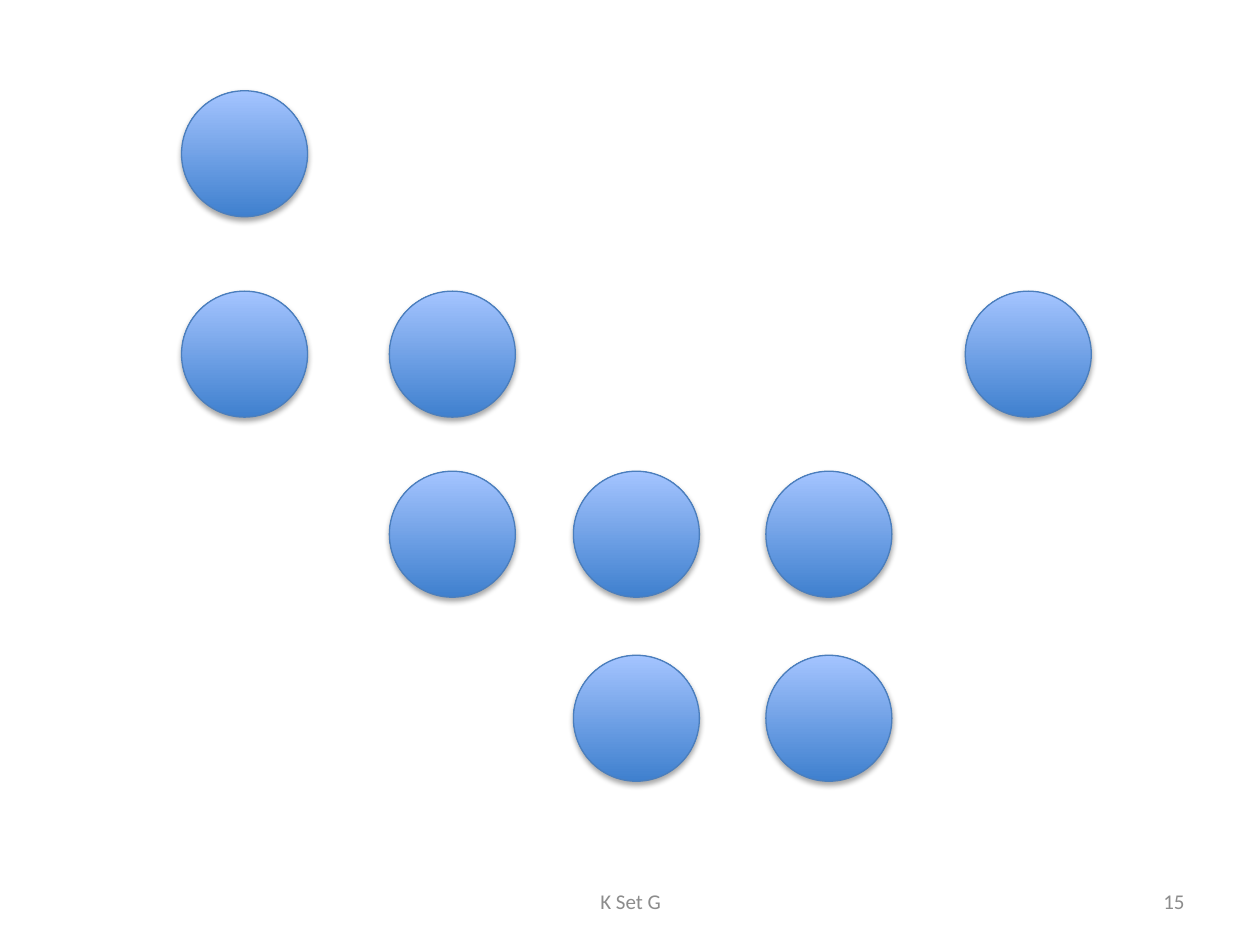
from typing import NamedTuple

from lxml.etree import SubElement
from pptx import Presentation
from pptx.dml.color import RGBColor
from pptx.enum.shapes import MSO_SHAPE
from pptx.enum.text import MSO_ANCHOR, PP_ALIGN
from pptx.oxml.ns import qn
from pptx.slide import Slide
from pptx.util import Cm, Pt


class FooterText(NamedTuple):
    text: str
    left: float
    width: float
    align: PP_ALIGN


DIAMETER = 2.54
COLUMNS = [3.66, 7.85, 11.56, 15.44, 19.46]
ROWS = [
    (1.83, "●····"),
    (5.87, "●●··●"),
    (9.5, "·●●●·"),
    (13.21, "··●●·"),
]
GRADIENT = ["3F80CE", "A4C4FF"]
OUTLINE = "4B7EBC"
FOOTER_TOP, FOOTER_HEIGHT = 17.65, 1.02
FOOTERS = [
    FooterText("K Set G", 8.69, 8.05, PP_ALIGN.CENTER),
    FooterText("15", 18.21, 5.92, PP_ALIGN.RIGHT),
]
FOOTER_FONT = {"name": "Calibri", "size": Pt(12)}


def color(value: str) -> RGBColor:
    return RGBColor.from_string(value)


def add_shadow(shape) -> None:
    """Give the shape a soft shadow falling straight down."""
    shape.shadow.inherit = False
    effects = shape._element.spPr.find(qn("a:effectLst"))
    shadow = SubElement(effects, qn("a:outerShdw"), blurRad="40000",
                        dist="23000", dir="5400000", rotWithShape="0")
    black = SubElement(shadow, qn("a:srgbClr"), val="000000")
    SubElement(black, qn("a:alpha"), val="35000")


def add_circle(s: Slide, left: float, top: float) -> None:
    circle = s.shapes.add_shape(MSO_SHAPE.OVAL, Cm(left), Cm(top),
                                Cm(DIAMETER), Cm(DIAMETER))
    circle.fill.gradient()
    circle.fill.gradient_angle = 90
    for stop, position, value in zip(circle.fill.gradient_stops, (0, 1), GRADIENT):
        stop.position = position
        stop.color.rgb = color(value)
    circle.line.color.rgb = color(OUTLINE)
    circle.line.width = Pt(0.75)
    add_shadow(circle)


def add_footer(s: Slide, footer: FooterText) -> None:
    box = s.shapes.add_textbox(Cm(footer.left), Cm(FOOTER_TOP),
                               Cm(footer.width), Cm(FOOTER_HEIGHT))
    tf = box.text_frame
    tf.word_wrap = True
    tf.vertical_anchor = MSO_ANCHOR.MIDDLE
    p = tf.paragraphs[0]
    p.alignment = footer.align
    r = p.add_run()
    r.text = footer.text
    for name, value in FOOTER_FONT.items():
        setattr(r.font, name, value)
    r.font.color.rgb = color("8C8C8C")


def main() -> None:
    prs = Presentation()
    prs.slide_width, prs.slide_height = Cm(25.4), Cm(19.05)
    s = prs.slides.add_slide(prs.slide_layouts.get_by_name("Blank"))
    for top, pattern in ROWS:
        for left, mark in zip(COLUMNS, pattern):
            if mark == "●":
                add_circle(s, left, top)
    for footer in FOOTERS:
        add_footer(s, footer)
    prs.save("out.pptx")


if __name__ == "__main__":
    main()
